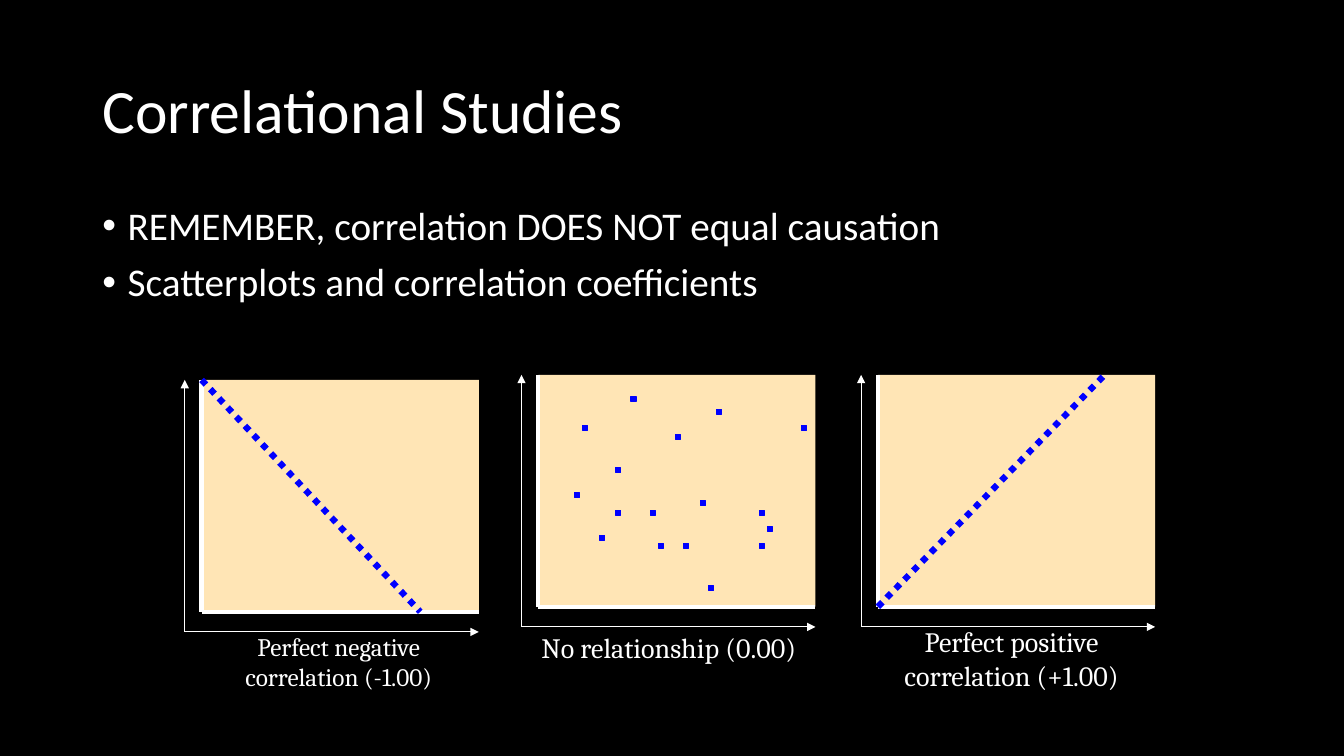
from lxml import etree
from pptx import Presentation
from pptx import util as u
from pptx.dml.color import RGBColor
from pptx.enum import dml, shapes, text
from pptx.oxml import ns

COLOURS = {"night": "000000", "white": "FFFFFF", "sand": "FFE5B5", "blue": "0000FF"}
PLOT_WIDTH, PLOT_HEIGHT = 198, 165.6
AXIS_GAP_X, AXIS_GAP_Y = 12, 14.4
DOT_SIZE = 3.6


def write(frame, words, font="Calibri", size=28, align=text.PP_ALIGN.LEFT,
          anchor=text.MSO_ANCHOR.TOP, wrap=True, spacing=1, before=0, bullet=False):
    frame.word_wrap = wrap
    frame.vertical_anchor = anchor
    frame.text = words
    for para in frame.paragraphs:
        para.alignment = align
        para.line_spacing = spacing
        para.space_before = u.Pt(before)
        if bullet:
            settings = para._p.get_or_add_pPr()
            settings.set("marL", str(u.Pt(18)))
            settings.set("indent", str(u.Pt(-18)))
            etree.SubElement(settings, ns.qn("a:buFont"), typeface="Arial")
            etree.SubElement(settings, ns.qn("a:buChar"), char="•")
        for span in para.runs:
            span.font.name = font
            span.font.size = u.Pt(size)
            span.font.color.rgb = RGBColor.from_string(COLOURS["white"])


def draw_line(group, start, end, colour="white", width=0.75, arrow=False, dotted=False):
    line = group.shapes.add_connector(
        shapes.MSO_CONNECTOR.STRAIGHT, *[u.Pt(value) for value in (*start, *end)])
    line.line.color.rgb = RGBColor.from_string(COLOURS[colour])
    line.line.width = u.Pt(width)
    if dotted:
        line.line.dash_style = dml.MSO_LINE.ROUND_DOT
    if arrow:
        etree.SubElement(line.line._get_or_add_ln(), ns.qn("a:tailEnd"), type="triangle")
    etree.SubElement(line._element.spPr, ns.qn("a:effectLst"))


deck = Presentation()
deck.slide_width, deck.slide_height = u.Pt(960), u.Pt(540)
page = deck.slides.add_slide(deck.slide_layouts[1])
page.background.fill.solid()
page.background.fill.fore_color.rgb = RGBColor.from_string(COLOURS["night"])

title, body = page.shapes.title, page.placeholders[1]
title.left, title.top, title.width, title.height = u.Pt(66), u.Pt(28.8), u.Pt(828), u.Pt(104.4)
body.left, body.top, body.width, body.height = u.Pt(66), u.Pt(144), u.Pt(828), u.Pt(342.6)
write(title.text_frame, "Correlational Studies", size=44,
      anchor=text.MSO_ANCHOR.MIDDLE, spacing=0.9)
write(body.text_frame,
      "REMEMBER, correlation DOES NOT equal causation\n"
      "Scatterplots and correlation coefficients",
      spacing=0.9, before=10, bullet=True)

scatter = [
    (66.2, 15.1), (31.7, 36), (97.9, 42.5), (127.4, 24.5), (187.9, 36), (55.4, 66.2),
    (25.9, 84.2), (79.9, 96.5), (55.4, 96.5), (157.7, 96.5), (115.9, 90), (163.4, 108),
    (43.9, 114.5), (85.7, 120.2), (103.7, 120.2), (157.7, 120.2), (121.7, 150.5),
]
plots = [
    {"corner": (144, 271.4), "trend": ((0, 0), (156.2, PLOT_HEIGHT)), "dots": []},
    {"corner": (384.5, 267.8), "trend": None, "dots": scatter},
    {"corner": (627.1, 267.8), "trend": ((0, PLOT_HEIGHT), (162, 0)), "dots": []},
]
for plot in plots:
    left, top = plot["corner"]
    right, bottom = left + PLOT_WIDTH, top + PLOT_HEIGHT
    group = page.shapes.add_group_shape()
    blocks = [(left, top, PLOT_WIDTH, PLOT_HEIGHT, "sand")]
    blocks += [(left + x, top + y, DOT_SIZE, DOT_SIZE, "blue") for x, y in plot["dots"]]
    for *place, colour in blocks:
        box = group.shapes.add_shape(
            shapes.MSO_SHAPE.RECTANGLE, *[u.Pt(value) for value in place])
        box.shadow.inherit = False
        box.fill.solid()
        box.fill.fore_color.rgb = RGBColor.from_string(COLOURS[colour])
        if colour == "blue":
            box.line.color.rgb = RGBColor.from_string(COLOURS[colour])
            box.line.width = u.Pt(0.75)
        else:
            box.line.fill.background()
    draw_line(group, (left, top), (left, bottom), width=3)
    draw_line(group, (left, bottom), (right, bottom), width=3)
    origin = (left - AXIS_GAP_X, bottom + AXIS_GAP_Y)
    for tip in [(origin[0], top), (right, origin[1])]:
        draw_line(group, origin, tip, arrow=True)
    if plot["trend"]:
        start, end = [(left + x, top + y) for x, y in plot["trend"]]
        draw_line(group, start, end, colour="blue", width=4.5, dotted=True)

captions = [
    ("Perfect negative\ncorrelation (-1.00)", (131.8, 447.1, 220.3, 51.1), 18, True),
    ("No relationship (0.00)", (374.4, 447.1, 206.6, 31), 20, False),
    ("Perfect positive\ncorrelation (+1.00)", (635.8, 442.8, 173.5, 55.4), 20, False),
]
for words, place, size, wrap in captions:
    box = page.shapes.add_textbox(*[u.Pt(value) for value in place])
    write(box.text_frame, words, font="Cambria", size=size,
          align=text.PP_ALIGN.CENTER, wrap=wrap)

deck.save("out.pptx")
